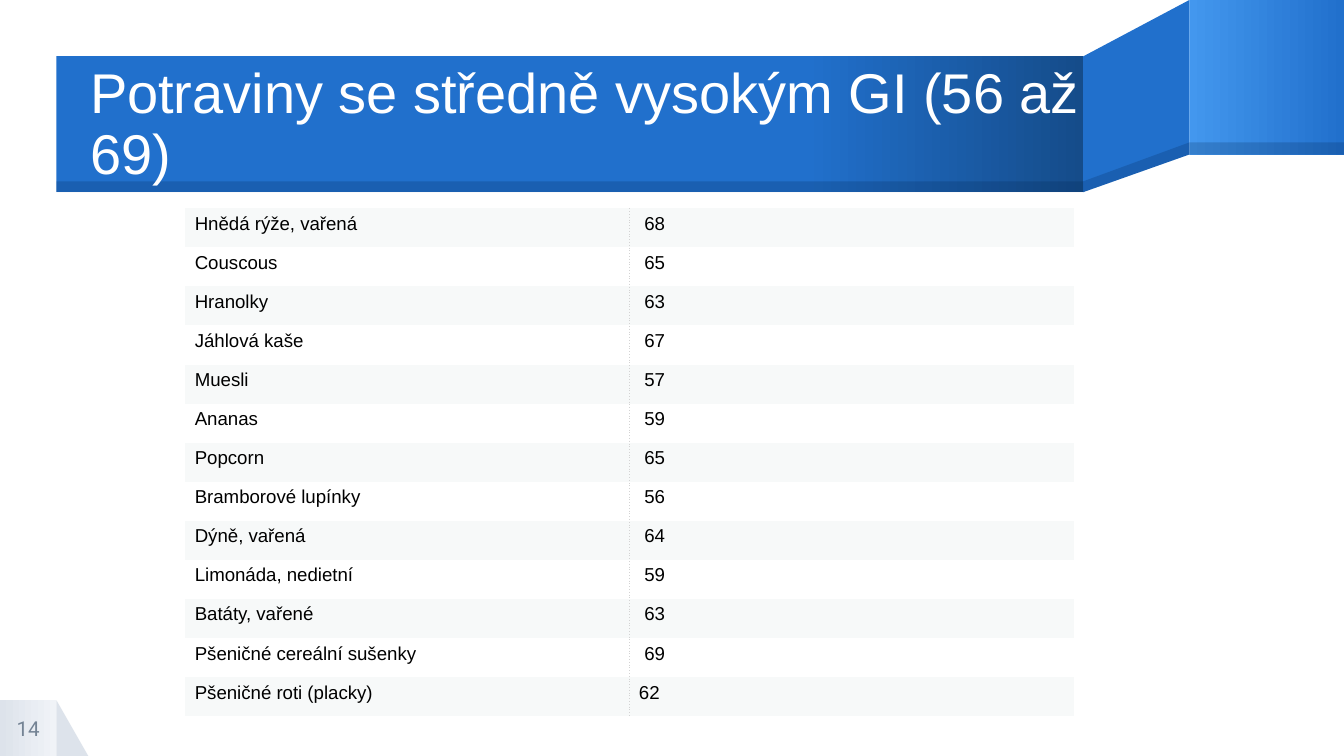
from lxml import etree
from pptx import Presentation
from pptx.dml.color import RGBColor
from pptx.enum.shapes import MSO_SHAPE as Shape
from pptx.enum.text import MSO_ANCHOR as Anchor, PP_ALIGN as Align
from pptx.oxml import parse_xml
from pptx.oxml.ns import nsdecls, qn
from pptx.util import Inches, Pt

WHITE = RGBColor(0xFF, 0xFF, 0xFF)
BLACK = RGBColor(0x00, 0x00, 0x00)
BLUE = RGBColor(0x21, 0x70, 0xCC)
LIGHT_BLUE = RGBColor(0x43, 0x97, 0xEE)
DARK_BLUE = RGBColor(0x15, 0x4C, 0x8A)
SHADE = RGBColor(0x00, 0x1F, 0x46)
GREY = RGBColor(0xDD, 0xE3, 0xEB)
PALE_GREY = RGBColor(0xF0, 0xF3, 0xF7)
NUMBER_GREY = RGBColor(0x74, 0x83, 0x94)
STRIPE = RGBColor(0xF7, 0xF9, 0xF9)
RULE_GREY = RGBColor(0xD3, 0xD3, 0xD3)

NO_STYLE = "{2D5ABB26-0587-4C30-8999-92F81FD0307C}"
FOODS = [
    ("Hnědá rýže, vařená", 68),
    ("Couscous", 65),
    ("Hranolky", 63),
    ("Jáhlová kaše", 67),
    ("Muesli", 57),
    ("Ananas", 59),
    ("Popcorn", 65),
    ("Bramborové lupínky", 56),
    ("Dýně, vařená", 64),
    ("Limonáda, nedietní", 59),
    ("Batáty, vařené", 63),
    ("Pšeničné cereální sušenky", 69),
    ("Pšeničné roti (placky)", 62),
]


def write(frame, text, size, color, font="Arial", align=Align.LEFT, spacing=1.0):
    para = frame.paragraphs[0]
    para.alignment = align
    para.line_spacing = spacing
    span = para.add_run()
    span.text = text
    span.font.size = Pt(size)
    span.font.name = font
    span.font.color.rgb = color


def add_text(page, box, text, **style):
    frame = page.shapes.add_textbox(*map(Inches, box)).text_frame
    frame.word_wrap = True
    frame.vertical_anchor = Anchor.MIDDLE
    frame.margin_left = frame.margin_right = 0
    frame.margin_top = frame.margin_bottom = 0
    write(frame, text, **style)


def paint(shape, color, alpha=None):
    shape.shadow.inherit = False
    shape.line.fill.background()
    shape.fill.solid()
    shape.fill.fore_color.rgb = color
    if alpha is not None:
        tint = shape.fill._xPr.find(".//" + qn("a:srgbClr"))
        etree.SubElement(tint, qn("a:alpha")).set("val", str(alpha * 1000))


def paint_gradient(shape, stops):
    """Left-to-right gradient from (percent, color) stops."""
    paint(shape, stops[0][1])
    marks = "".join(
        f'<a:gs pos="{percent * 1000}"><a:srgbClr val="{color}"/></a:gs>'
        for percent, color in stops
    )
    gradient = parse_xml(
        f'<a:gradFill {nsdecls("a")} rotWithShape="1"><a:gsLst>{marks}</a:gsLst>'
        '<a:lin ang="0" scaled="0"/></a:gradFill>'
    )
    solid = shape._element.spPr.find(qn("a:solidFill"))
    solid.getparent().replace(solid, gradient)


def add_block(page, box, kind=Shape.RECTANGLE):
    return page.shapes.add_shape(kind, *map(Inches, box))


def add_outline(page, points):
    corners = [(Inches(x), Inches(y)) for x, y in points]
    builder = page.shapes.build_freeform(*corners[0])
    builder.add_line_segments(corners[1:], close=True)
    return builder.convert_to_shape()


def add_page_number(page, box, number):
    left, top, size, _ = box
    paint(add_block(page, (left + size, top, 0.24, size), Shape.RIGHT_TRIANGLE), GREY)
    paint_gradient(add_block(page, box), [(0, GREY), (100, PALE_GREY)])
    add_text(page, box, number, size=11, color=NUMBER_GREY, font="Roboto",
             align=Align.CENTER)


def add_ribbon(page, box, title):
    left, top, width, height = box
    fold, end = left + 7.64, left + 8.43
    right, bottom = left + width, top + height
    band_top, end_bottom = top + 0.42, top + 1.15
    edge, end_edge = 0.08, 0.09

    # Folded ribbon: slanted piece, far end, title band
    paint(add_outline(page, [(end, top), (fold, band_top), (fold, bottom),
                             (end, end_bottom)]), BLUE)
    paint_gradient(add_block(page, (end, top, right - end, end_bottom - top)),
                   [(0, LIGHT_BLUE), (100, BLUE)])
    paint_gradient(add_block(page, (left, band_top, fold - left, bottom - band_top)),
                   [(0, BLUE), (73, BLUE), (100, DARK_BLUE)])

    # Translucent lower edge
    edges = [
        add_outline(page, [(end, end_bottom - end_edge), (fold, bottom - edge),
                           (fold, bottom), (end, end_bottom)]),
        add_block(page, (end, end_bottom - end_edge, right - end, end_edge)),
        add_block(page, (left, bottom - edge, fold - left, edge)),
    ]
    for shape in edges:
        paint(shape, SHADE, alpha=20)

    add_text(page, (left + 0.25, band_top + 0.01, 7.39, 1.01), title,
             size=30, color=WHITE, spacing=0.9)


def add_dotted_border(cell, side):
    line = parse_xml(
        f'<a:{side} {nsdecls("a")} w="6350"><a:solidFill><a:srgbClr val="{RULE_GREY}"/>'
        f'</a:solidFill><a:prstDash val="dot"/></a:{side}>'
    )
    cell._tc.get_or_add_tcPr().insert(0, line)


def add_food_table(page, box, foods):
    table = page.shapes.add_table(len(foods), 2, *map(Inches, box)).table
    table.first_row = table.horz_banding = False
    table._tbl.tblPr.find(qn("a:tableStyleId")).text = NO_STYLE
    for column in table.columns:
        column.width = Inches(box[2] / 2)
    for index, food in enumerate(foods):
        table.rows[index].height = Inches(box[3] / len(foods))
        for place, value in enumerate(food):
            cell = table.cell(index, place)
            # Values are slightly indented, except in the last row
            indented = place == 1 and index < len(foods) - 1
            cell.margin_left = Inches(0.11 if indented else 0.07)
            cell.margin_right = Inches(0.07)
            cell.margin_top = cell.margin_bottom = Inches(0.04)
            cell.fill.solid()
            cell.fill.fore_color.rgb = WHITE if index % 2 else STRIPE
            add_dotted_border(cell, "lnL" if place else "lnR")
            write(cell.text_frame, str(value), size=10, color=BLACK)


def main():
    deck = Presentation()
    deck.slide_width = Inches(10)
    deck.slide_height = deck.slide_width * 9 // 16
    page = deck.slides.add_slide(deck.slide_layouts[6])
    add_ribbon(page, (0.42, 0, 9.58, 1.43),
               "Potraviny se středně vysokým GI (56 až 69)")
    add_page_number(page, (0, 5.21, 0.42, 0.42), "14")
    add_food_table(page, (1.38, 1.55, 6.61, 3.78), FOODS)
    deck.save("out.pptx")


if __name__ == "__main__":
    main()
